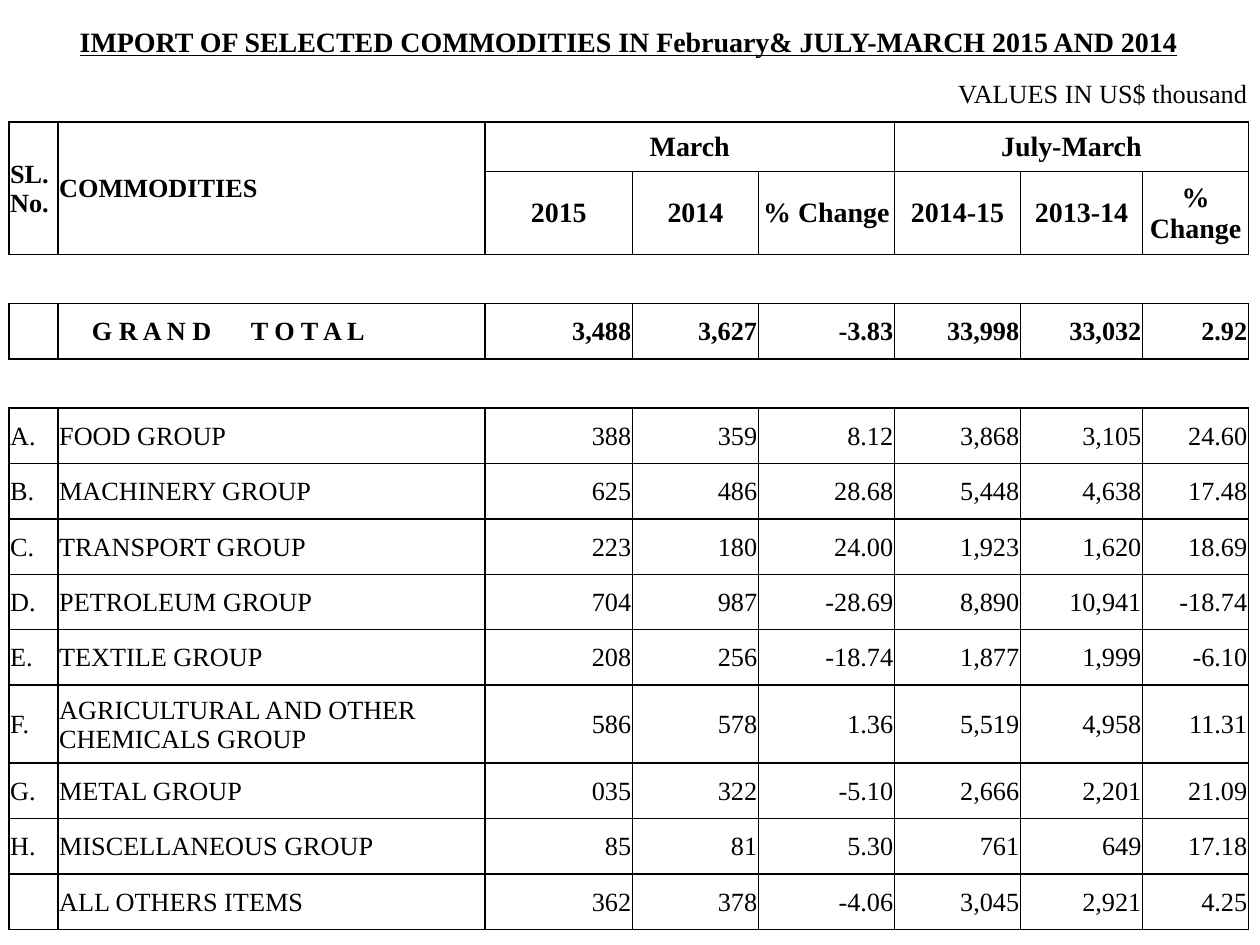
from lxml.etree import SubElement
from pptx import Presentation
from pptx.dml.color import RGBColor
from pptx.enum.text import MSO_ANCHOR, PP_ALIGN
from pptx.oxml.ns import qn
from pptx.util import Inches, Pt

COLORS = {"ink": "000000"}
FONT = "Times New Roman"
PLAIN_STYLE = "{2D5ABB26-0587-4C30-8999-92F81FD0307C}"  # no style, no grid

COLUMN_WIDTHS = [0.39, 3.39, 1.17, 0.38, 0.62, 1.08, 1, 0.97, 0.84]
ROW_HEIGHT = 0.44
OTHER_HEIGHTS = {0: 0.39, 2: 0.39, 3: 0.66, 4: 0.39, 6: 0.39, 12: 0.62}
ROW_COUNT = 16

VALUE_COLUMNS = [2, 3, 5, 6, 7, 8]
TOTAL_ROW, FIRST_GROUP_ROW = 5, 7
EDGES = {0: "", 1: "B", 4: "TB", 6: "TB"}  # the other rows are boxed

YEARS = ["2015", "2014", "% Change", "2014-15", "2013-14", "% Change"]
TOTALS = ["3,488", "3,627", "-3.83", "33,998", "33,032", "2.92"]
GROUPS = [
    ("A.", "FOOD GROUP", "388", "359", "8.12", "3,868", "3,105", "24.60"),
    ("B.", "MACHINERY GROUP", "625", "486", "28.68", "5,448", "4,638", "17.48"),
    ("C.", "TRANSPORT GROUP", "223", "180", "24.00", "1,923", "1,620", "18.69"),
    ("D.", "PETROLEUM GROUP", "704", "987", "-28.69", "8,890", "10,941", "-18.74"),
    ("E.", "TEXTILE GROUP", "208", "256", "-18.74", "1,877", "1,999", "-6.10"),
    ("F.", "AGRICULTURAL AND OTHER CHEMICALS GROUP",
     "586", "578", "1.36", "5,519", "4,958", "11.31"),
    ("G.", "METAL GROUP", "035", "322", "-5.10", "2,666", "2,201", "21.09"),
    ("H.", "MISCELLANEOUS GROUP", "85", "81", "5.30", "761", "649", "17.18"),
    ("", "ALL OTHERS ITEMS", "362", "378", "-4.06", "3,045", "2,921", "4.25"),
]


def format_span(span, size, bold=False, underline=False):
    font = span.font
    font.name, font.size = FONT, Pt(size)
    font.bold, font.underline = bold, underline
    font.color.rgb = RGBColor.from_string(COLORS["ink"])


def write(cell, text, size=15, align=PP_ALIGN.LEFT, bold=False, underline=False):
    if not text:
        return
    cell.text_frame.text = text
    para = cell.text_frame.paragraphs[0]
    para.alignment = align
    format_span(para.runs[0], size, bold, underline)


def write_values(table, row, values, **style):
    for column, value in zip(VALUE_COLUMNS, values):
        write(table.cell(row, column), value, **style)


def write_total_label(cell):
    """Indented, spaced-out label with one widened gap between its words."""
    cell.margin_left = Inches(0.27)
    para = cell.text_frame.paragraphs[0]
    for text in ("G R A N D", " ", "T O T A L"):
        span = para.add_run()
        span.text = text
        format_span(span, 15, bold=True)
    para.runs[1].font._element.set("spc", "1875")


def draw_borders(cell, edges):
    properties = cell._tc.get_or_add_tcPr()
    for edge in edges:
        line = SubElement(properties, qn(f"a:ln{edge}"), w=str(Pt(1)))
        fill = SubElement(line, qn("a:solidFill"))
        SubElement(fill, qn("a:srgbClr"), val=COLORS["ink"])


def add_grid(page):
    frame = page.shapes.add_table(ROW_COUNT, len(COLUMN_WIDTHS), Inches(0.07),
                                  Inches(0.14), Inches(9.84), Inches(7.22))
    table = frame.table
    table._tbl.tblPr.find(qn("a:tableStyleId")).text = PLAIN_STYLE
    table.first_row = table.horz_banding = False
    for column, width in zip(table.columns, COLUMN_WIDTHS):
        column.width = Inches(width)
    for index, row in enumerate(table.rows):
        row.height = Inches(OTHER_HEIGHTS.get(index, ROW_HEIGHT))
        for cell in row.cells:
            cell.margin_left = cell.margin_right = cell.margin_top = Inches(0.01)
            cell.margin_bottom = 0
            cell.vertical_anchor = MSO_ANCHOR.MIDDLE
            draw_borders(cell, EDGES.get(index, "LRTB"))
            cell.fill.background()
    return table


def merge_cells(table):
    spans = [(0, 0, 0, 8), (1, 2, 1, 3), (1, 4, 1, 8), (2, 0, 3, 0),
             (2, 1, 3, 1), (2, 2, 2, 5), (2, 6, 2, 8)]
    spans += [(row, 3, row, 4) for row in range(3, ROW_COUNT)]
    for top, left, bottom, right in spans:
        table.cell(top, left).merge(table.cell(bottom, right))


def fill_headings(table):
    heading = {"size": 16, "align": PP_ALIGN.CENTER, "bold": True}
    write(table.cell(0, 0),
          "IMPORT OF SELECTED COMMODITIES IN February& JULY-MARCH 2015 AND 2014",
          underline=True, **heading)
    write(table.cell(1, 4), "VALUES IN US$ thousand", align=PP_ALIGN.RIGHT)
    write(table.cell(2, 0), "SL. No.", bold=True)
    write(table.cell(2, 1), "COMMODITIES", bold=True)
    write(table.cell(2, 2), "March", **heading)
    write(table.cell(2, 6), "July-March", **heading)
    write_values(table, 3, YEARS, **heading)


def fill_figures(table):
    write_total_label(table.cell(TOTAL_ROW, 1))
    write_values(table, TOTAL_ROW, TOTALS, align=PP_ALIGN.RIGHT, bold=True)
    for row, (letter, name, *values) in enumerate(GROUPS, FIRST_GROUP_ROW):
        write(table.cell(row, 0), letter)
        write(table.cell(row, 1), name)
        write_values(table, row, values, align=PP_ALIGN.RIGHT)


def main():
    deck = Presentation()
    deck.slide_width, deck.slide_height = Inches(10), Inches(7.5)
    # The heading is a table row, so the blank layout is used
    page = deck.slides.add_slide(deck.slide_layouts[6])
    table = add_grid(page)
    merge_cells(table)
    fill_headings(table)
    fill_figures(table)
    deck.save("out.pptx")


if __name__ == "__main__":
    main()
